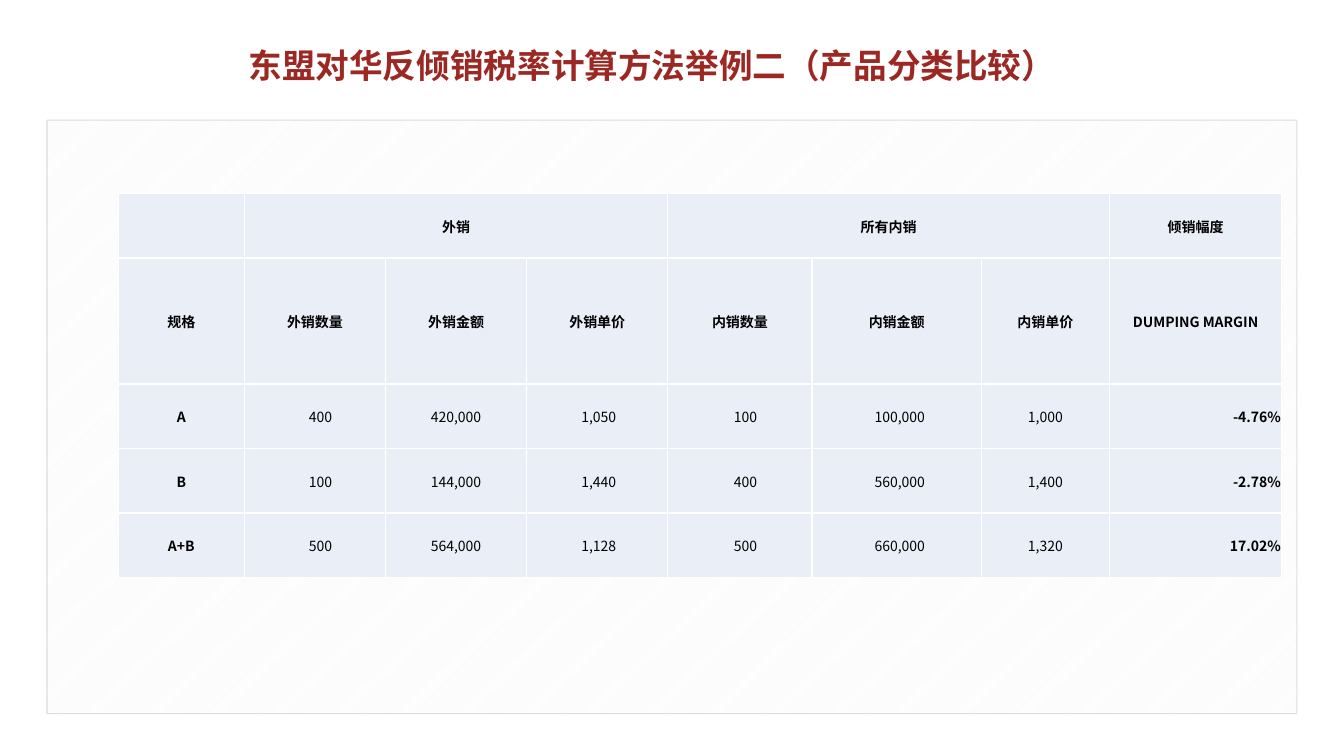
import pptx
import pptx.util
import pptx.dml.color
import pptx.enum.dml
import pptx.enum.shapes
import pptx.enum.text
import pptx.oxml
import pptx.oxml.ns
import lxml.etree

FONT = "Noto Sans CJK SC"
HUES = {"title": "9B2823", "text": "000000", "cell": "EAEFF7", "rule": "FFFFFF",
        "edge": "595959", "hatch": "F2F2F2", "paper": "FFFFFF"}
WIDE, HIGH = 13.33, 7.5
COLS = [1.25, 1.4, 1.4, 1.4, 1.43, 1.68, 1.27, 1.71]
ROWS = [0.64, 1.25, 0.64, 0.64, 0.64]
DATA = [
    ["", "外销", "", "", "所有内销", "", "", "倾销幅度"],
    ["规格", "外销数量", "外销金额", "外销单价",
     "内销数量", "内销金额", "内销单价", "DUMPING MARGIN"],
    ["A", "400", "420,000", "1,050", "100", "100,000", "1,000", "-4.76%"],
    ["B", "100", "144,000", "1,440", "400", "560,000", "1,400", "-2.78%"],
    ["A+B", "500", "564,000", "1,128", "500", "660,000", "1,320", "17.02%"],
]
HEADS = 2
SPANS = [(1, 3), (4, 6)]
NUDGE = {1: 0.11, 3: 0.03, 4: 0.11, 5: 0.06}
ALIGN = pptx.enum.text.PP_ALIGN
MID = pptx.enum.text.MSO_ANCHOR.MIDDLE
inch = pptx.util.Inches


def tint(name):
    return pptx.dml.color.RGBColor.from_string(HUES[name])


def apply(item, form):
    for key, value in form.items():
        setattr(item, key, value)


def place(left, top, width, height):
    """Turn shares of the slide into a box of lengths."""
    return [inch(share * size) for share, size in
            zip((left, top, width, height), (WIDE, HIGH, WIDE, HIGH))]


def write(frame, text, hue, align, size, bold):
    para = frame.paragraphs[0]
    para.alignment = align
    run = para.add_run()
    run.text = text
    run.font.color.rgb = tint(hue)
    apply(run.font, {"name": FONT, "size": pptx.util.Pt(size), "bold": bold})
    east = lxml.etree.SubElement(run.font._element, pptx.oxml.ns.qn("a:ea"))
    east.set("typeface", FONT)
    return para


def add_title(slide, text):
    title = slide.shapes.title
    box = place(0.155, 0.05, 0.66, 0.08)
    apply(title, dict(zip(("left", "top", "width", "height"), box)))
    apply(title.text_frame, {"vertical_anchor": MID, "word_wrap": True,
                             "auto_size": pptx.enum.text.MSO_AUTO_SIZE.NONE})
    para = write(title.text_frame, text, "title", ALIGN.CENTER, 24, True)
    para.line_spacing = 0.9


def add_panel(slide):
    """Add the hatched panel with a faint edge."""
    panel = slide.shapes.add_shape(pptx.enum.shapes.MSO_SHAPE.RECTANGLE,
                                   *place(0.035, 0.159, 0.93, 0.785))
    panel.shadow.inherit = False
    panel.fill.patterned()
    panel.fill.pattern = pptx.enum.dml.MSO_PATTERN.LIGHT_UPWARD_DIAGONAL
    panel.fill.fore_color.rgb = tint("hatch")
    panel.fill.back_color.rgb = tint("paper")
    panel.line.color.rgb = tint("edge")
    panel.line.width = pptx.util.Pt(0.75)
    edge = panel.line._ln.find(".//" + pptx.oxml.ns.qn("a:srgbClr"))
    lxml.etree.SubElement(edge, pptx.oxml.ns.qn("a:alpha")).set("val", "20000")


def rule(cell):
    """Draw the four borders; they must come before the cell's fill."""
    props = cell._tc.get_or_add_tcPr()
    for side in "LRTB":
        props.append(pptx.oxml.parse_xml(
            f'<a:ln{side} {pptx.oxml.ns.nsdecls("a")} w="12700"><a:solidFill>'
            f'<a:srgbClr val="{HUES["rule"]}"/></a:solidFill></a:ln{side}>'))


def fill_cell(cell, text, row, col):
    rule(cell)
    cell.fill.solid()
    cell.fill.fore_color.rgb = tint("cell")
    body = row >= HEADS
    last = col == len(COLS) - 1
    nudge = NUDGE.get(col, 0) if body else 0
    apply(cell, {"vertical_anchor": MID, "margin_left": inch(0.01 + nudge),
                 "margin_right": inch(0.01), "margin_top": inch(0.01),
                 "margin_bottom": 0})
    if text:
        align = ALIGN.RIGHT if body and last else ALIGN.CENTER
        bold = not body or col == 0 or last
        write(cell.text_frame, text, "text", align, 10, bold)


def add_grid(slide):
    left, top = place(0.088, 0.256, 0, 0)[:2]
    table = slide.shapes.add_table(len(ROWS), len(COLS), left, top,
                                   inch(sum(COLS)), inch(sum(ROWS))).table
    apply(table, {"first_row": False, "horz_banding": False})
    for col, width in zip(table.columns, COLS):
        col.width = inch(width)
    for row, height in zip(table.rows, ROWS):
        row.height = inch(height)
    for start, end in SPANS:
        table.cell(0, start).merge(table.cell(0, end))
    for row, texts in enumerate(DATA):
        for col, text in enumerate(texts):
            fill_cell(table.cell(row, col), text, row, col)


def main():
    deck = pptx.Presentation()
    apply(deck, {"slide_width": inch(WIDE), "slide_height": inch(HIGH)})
    slide = deck.slides.add_slide(deck.slide_layouts[5])
    add_panel(slide)
    add_title(slide, "东盟对华反倾销税率计算方法举例二（产品分类比较）")
    add_grid(slide)
    deck.save("out.pptx")


if __name__ == "__main__":
    main()
